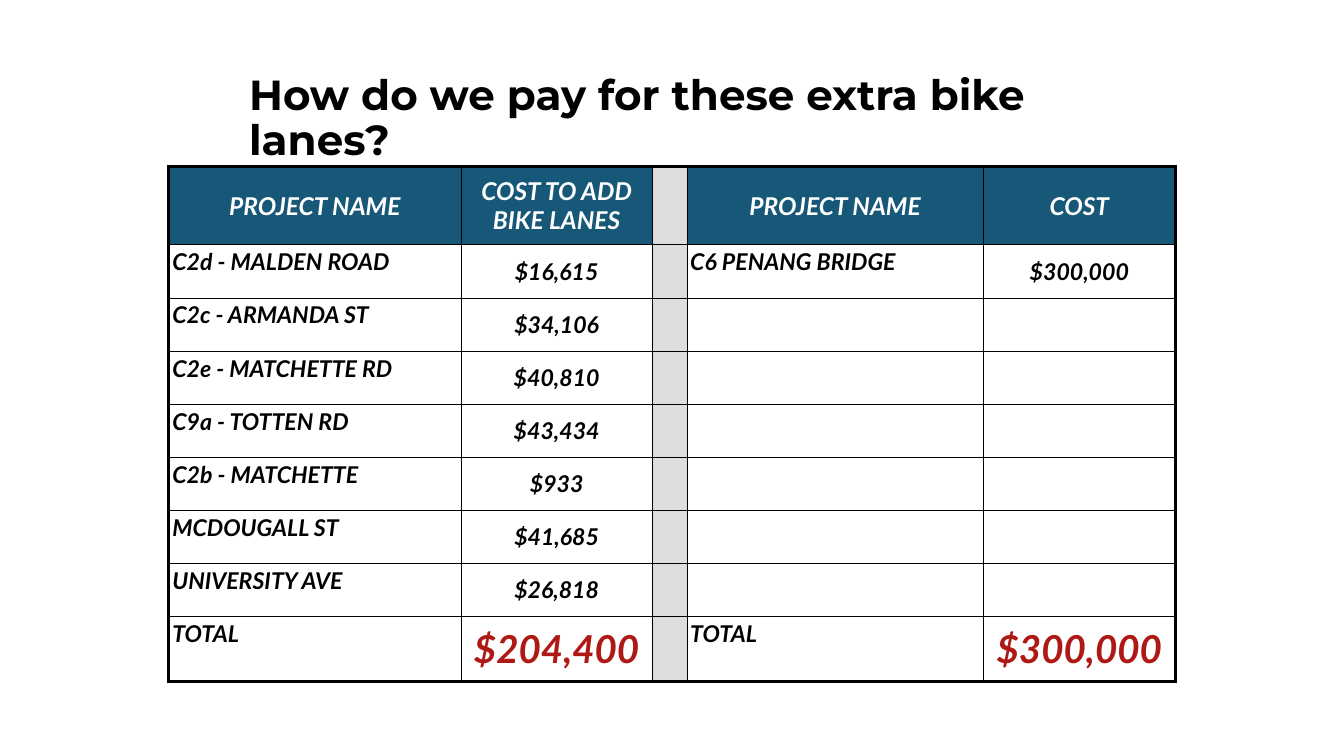
from dataclasses import dataclass

from pptx import Presentation
from pptx.dml.color import RGBColor as Rgb
from pptx.enum.text import MSO_ANCHOR as Anchor, MSO_AUTO_SIZE as Fit, PP_ALIGN as Align
from pptx.oxml.ns import qn
from pptx.util import Pt
from lxml.etree import SubElement as Sub


@dataclass(frozen=True)
class Theme:
    black: str = "000000"
    white: str = "FFFFFF"
    blue: str = "175778"
    gray: str = "DDDDDD"
    red: str = "AE1916"
    title: int = 60
    head: int = 35
    body: int = 33
    total: int = 55
    title_font: str = "Montserrat"
    font: str = "Lato"
    thick: float = 5
    mid: float = 0.75
    thin: float = 0.35


def apply(item, **form):
    for key, value in form.items():
        setattr(item, key, value)


class Page:
    def __init__(self, slide, theme):
        self.slide, self.theme = slide, theme

    def label(self, frame, text, color, align=Align.LEFT, space=1.0, **form):
        para = frame.paragraphs[0]
        apply(para, alignment=align, line_spacing=space)
        run = para.add_run()
        run.text = text
        apply(run.font, bold=True, **form)
        run.font.color.rgb = Rgb.from_string(color)

    def title(self, text, left, top, width, height):
        box = self.slide.shapes.add_textbox(Pt(left), Pt(top), Pt(width), Pt(height))
        frame = box.text_frame
        sides = ("left", "top", "right", "bottom")
        apply(frame, word_wrap=True, auto_size=Fit.SHAPE_TO_FIT_TEXT,
              **{f"margin_{side}": Pt(3.6) for side in sides})
        th = self.theme
        self.label(frame, text, th.black, space=0.9, size=Pt(th.title), name=th.title_font)

    def border(self, cell, **sides):
        props = cell._tc.get_or_add_tcPr()
        for side, width in sides.items():
            line = Sub(props, qn(f"a:ln{side}"), w=str(int(Pt(width))))
            Sub(Sub(line, qn("a:solidFill")), qn("a:srgbClr"), val=self.theme.black)

    def cell(self, cell, text, fill, middle, color, size):
        pad = Pt(5)
        apply(cell, margin_left=pad, margin_top=pad, margin_right=pad, margin_bottom=pad,
              vertical_anchor=Anchor.MIDDLE if middle else Anchor.TOP)
        if fill:
            cell.fill.solid()
            cell.fill.fore_color.rgb = Rgb.from_string(fill)
        else:
            cell.fill.background()
        if text:
            self.label(cell.text_frame, text, color, Align.CENTER if middle else Align.LEFT,
                       size=Pt(size), name=self.theme.font, italic=True)

    def table(self, data, left, top, cols, rows, gap):
        """Draw the costs; gap is the index of the gray dividing column."""
        th, last, end = self.theme, len(rows) - 1, len(cols) - 1
        grid = self.slide.shapes.add_table(len(rows), len(cols), Pt(left), Pt(top),
                                           Pt(sum(cols)), Pt(sum(rows))).table
        apply(grid, first_row=False, horz_banding=False)
        for col, width in zip(grid.columns, cols):
            col.width = Pt(width)
        for row, height in zip(grid.rows, rows):
            row.height = Pt(height)

        def rule(edge, count):
            """Weight of a row edge or column edge."""
            return th.thick if edge in (0, count) else th.thin

        for r, line in enumerate(data):
            for c, text in enumerate(line):
                cell = grid.cell(r, c)
                head, cost = r == 0, c in (1, end)
                sides = dict(L=rule(c, len(cols)), R=rule(c + 1, len(cols)),
                             T=rule(r, len(rows)), B=rule(r + 1, len(rows)))
                if head:
                    sides["B"] = th.mid
                elif r == 1:
                    sides["T"] = th.mid
                if not head and c < 2:
                    sides["R" if c == 0 else "L"] = th.mid
                self.border(cell, **sides)
                if head:
                    color, size = th.white, th.head
                elif r == last and cost:
                    color, size = th.red, th.total
                else:
                    color, size = th.black, th.body
                fill = th.gray if c == gap else th.blue if head else None
                self.cell(cell, text, fill, head or cost, color, size)


COSTS = [
    ("C2d - MALDEN ROAD", "$16,615"),
    ("C2c - ARMANDA ST", "$34,106"),
    ("C2e - MATCHETTE RD", "$40,810"),
    ("C9a - TOTTEN RD", "$43,434"),
    ("C2b - MATCHETTE", "$933"),
    ("MCDOUGALL ST", "$41,685"),
    ("UNIVERSITY AVE", "$26,818"),
]
OTHER = [("C6 PENANG BRIDGE", "$300,000")]


def main():
    deck = Presentation()
    apply(deck, slide_width=Pt(1918.8), slide_height=Pt(1080))
    page = Page(deck.slides.add_slide(deck.slide_layouts[6]), Theme())
    page.title("How do we pay for these extra bike lanes?", 352, 102, 1215, 79)

    other = OTHER + [("", "")] * (len(COSTS) - len(OTHER))
    data = [("PROJECT NAME", "COST TO ADD BIKE LANES", "", "PROJECT NAME", "COST")]
    data += [(*own, "", *alt) for own, alt in zip(COSTS, other)]
    data.append(("TOTAL", "$204,400", "", "TOTAL", "$300,000"))
    page.table(data, 241, 238.5, cols=[417, 273.5, 49, 423.5, 274],
               rows=[111] + [75.8] * len(COSTS) + [93.6], gap=2)
    deck.save("out.pptx")


if __name__ == "__main__":
    main()
